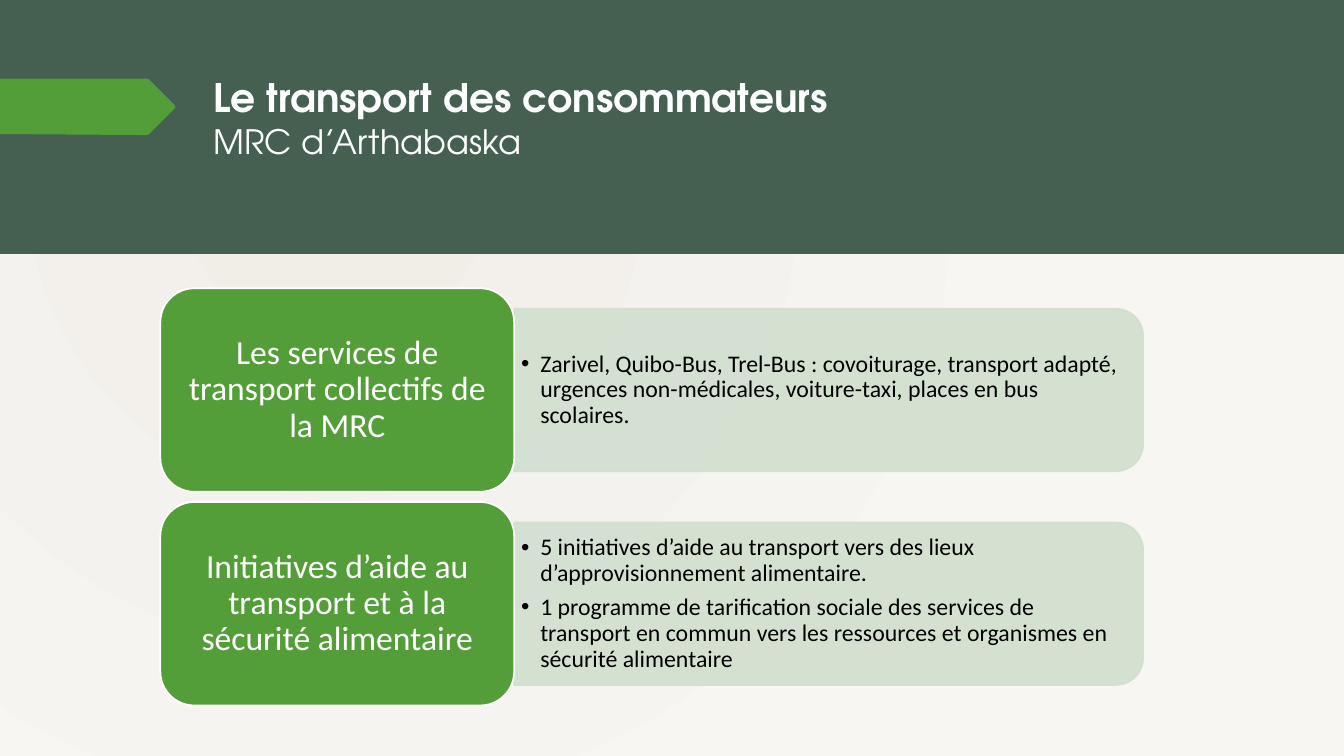
from dataclasses import dataclass
from typing import Any

from lxml.etree import SubElement
from pptx import Presentation
from pptx.dml.color import RGBColor
from pptx.enum.shapes import MSO_SHAPE as Preset
from pptx.enum.text import MSO_ANCHOR as Anchor, PP_ALIGN as Align
from pptx.oxml.ns import qn
from pptx.util import Inches, Pt

WIDTH, HEIGHT = Inches(13.333), Inches(7.5)
GREEN, DARK, PALE, WHITE, BLACK = "549E39", "455F51", "D1DFCE", "FFFFFF", "000000"
FIRST_ROW, ROW_PITCH = 38.13, 28.27
ARROW_OUTLINE = [(0, 10.4), (10.95, 10.4), (11.1, 10.53), (12.98, 13.87), (13.05, 14.13),
                 (12.98, 14.4), (11.1, 17.73), (10.95, 17.87), (0, 17.73)]


@dataclass(frozen=True)
class Area:
    left: float
    top: float
    width: float
    height: float

    def lower(self, rows: float) -> "Area":
        return Area(self.left, self.top + rows, self.width, self.height)


@dataclass(frozen=True)
class Topic:
    heading: str
    points: tuple[str, ...]


HEADER = Area(0, 0, 100, 33.6)
TITLE = Area(15.15, 9.07, 76.95, 18.67)
CARD = Area(11.93, FIRST_ROW, 26.33, 26.93)
PANEL = Area(38.25, FIRST_ROW + 2.73, 46.8, 21.47)
POINTS = Area(38.25, FIRST_ROW + 3.73, 46.2, 19.47)
TOPICS = [
    Topic("Les services de transport collectifs de la MRC",
          ("Zarivel, Quibo-Bus, Trel-Bus : covoiturage, transport adapté, urgences "
           "non-médicales, voiture-taxi, places en bus scolaires.",)),
    Topic("Initiatives d’aide au transport et à la sécurité alimentaire",
          ("5 initiatives d’aide au transport vers des lieux d’approvisionnement alimentaire.",
           "1 programme de tarification sociale des services de transport en commun vers "
           "les ressources et organismes en sécurité alimentaire")),
]


def column(share: float) -> int:
    return round(WIDTH * share / 100)


def row(share: float) -> int:
    return round(HEIGHT * share / 100)


def frame(area: Area) -> tuple[int, int, int, int]:
    return column(area.left), row(area.top), column(area.width), row(area.height)


def color(value: str) -> RGBColor:
    return RGBColor.from_string(value)


def apply(target: Any, values: dict[str, Any]) -> None:
    for name, value in values.items():
        setattr(target, name, value)


def paint(shape: Any, fill: str, line: str | None = None) -> None:
    shape.shadow.inherit = False
    shape.fill.solid()
    shape.fill.fore_color.rgb = color(fill)
    if line:
        shape.line.color.rgb = color(line)
        shape.line.width = Pt(1.25)
    else:
        shape.line.fill.background()


def write(para: Any, text: str, font: str, size: float, ink: str, bold: bool = False) -> None:
    span = para.add_run()
    span.text = text
    apply(span.font, {"name": font, "size": Pt(size), "bold": bold})
    span.font.color.rgb = color(ink)


def add_bullet(para: Any) -> None:
    properties = para._p.get_or_add_pPr()
    indent = Inches(0.19)
    properties.set("marL", str(indent))
    properties.set("indent", str(-indent))
    SubElement(properties, qn("a:buFont")).set("typeface", "Arial")
    SubElement(properties, qn("a:buChar")).set("char", "•")


def add_background(page: Any) -> None:
    fill = page.background.fill
    fill.gradient()
    for stop, value, position in zip(fill.gradient_stops, ("F1EEE8", "F8F6F3"), (0, 1)):
        stop.color.rgb = color(value)
        stop.position = position
    gradient = next(page._element.iter(qn("a:gradFill")))
    gradient.remove(gradient.find(qn("a:lin")))
    circle = SubElement(gradient, qn("a:path"))
    circle.set("path", "circle")
    target = SubElement(circle, qn("a:fillToRect"))
    for side, share in {"l": 50, "t": 50, "r": 100, "b": 100}.items():
        target.set(side, str(share * 1000))


def add_header(page: Any) -> None:
    paint(page.shapes.add_shape(Preset.RECTANGLE, *frame(HEADER)), DARK)
    box = page.shapes.add_textbox(*frame(TITLE))
    box.text_frame.word_wrap = True
    para = box.text_frame.paragraphs[0]
    write(para, "Le transport des consommateurs", "TeX Gyre Adventor", 28, "FEFFFF", True)
    para.add_line_break()
    write(para, "MRC d’Arthabaska", "TeX Gyre Adventor", 24, "FEFFFF")
    start, *others = [(column(x), row(y)) for x, y in ARROW_OUTLINE]
    builder = page.shapes.build_freeform(*start)
    builder.add_line_segments(others, close=True)
    paint(builder.convert_to_shape(), GREEN)


def add_panel(page: Any, area: Area) -> None:
    left, top, width, height = frame(area)
    shift = (width - height) // 2
    panel = page.shapes.add_shape(Preset.ROUND_2_SAME_RECTANGLE,
                                  left + shift, top - shift, height, width)
    panel.rotation = 90
    paint(panel, PALE, PALE)
    for tint in panel._element.spPr.iter(qn("a:srgbClr")):
        SubElement(tint, qn("a:alpha")).set("val", "90000")


def add_points(page: Any, area: Area, points: tuple[str, ...]) -> None:
    body = page.shapes.add_textbox(*frame(area)).text_frame
    side, edge = Inches(0.07), Inches(0.04)
    apply(body, {"word_wrap": True, "vertical_anchor": Anchor.MIDDLE, "margin_left": side,
                 "margin_right": side, "margin_top": edge, "margin_bottom": edge})
    for index, point in enumerate(points):
        para = body.add_paragraph() if index else body.paragraphs[0]
        apply(para, {"line_spacing": 0.9, "space_after": Pt(6)})
        add_bullet(para)
        write(para, point, "Calibri", 17, BLACK)


def add_card(page: Any, area: Area, heading: str) -> None:
    card = page.shapes.add_shape(Preset.ROUNDED_RECTANGLE, *frame(area))
    paint(card, GREEN, WHITE)
    apply(card.text_frame, {"word_wrap": True, "vertical_anchor": Anchor.MIDDLE})
    para = card.text_frame.paragraphs[0]
    apply(para, {"alignment": Align.CENTER, "line_spacing": 0.9})
    write(para, heading, "Calibri", 24, WHITE)


def main() -> None:
    """Build the slide on consumer transport and save it."""
    deck = Presentation()
    apply(deck, {"slide_width": WIDTH, "slide_height": HEIGHT})
    page = deck.slides.add_slide(deck.slide_layouts[6])
    add_background(page)
    add_header(page)
    for index, topic in enumerate(TOPICS):
        drop = index * ROW_PITCH
        add_panel(page, PANEL.lower(drop))
        add_points(page, POINTS.lower(drop), topic.points)
        add_card(page, CARD.lower(drop), topic.heading)
    deck.save("out.pptx")


if __name__ == "__main__":
    main()
